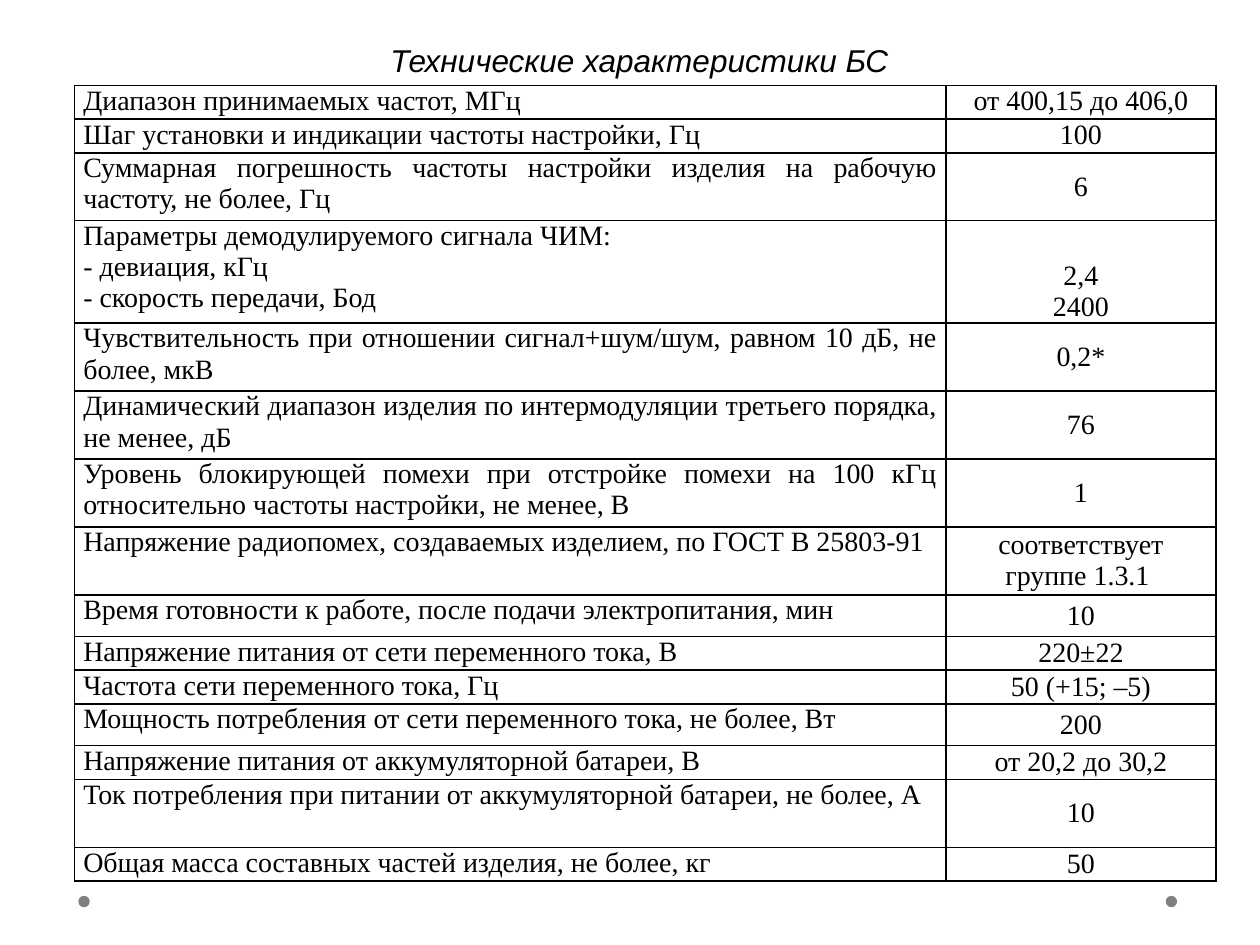
from lxml.etree import SubElement
from pptx import Presentation
from pptx.dml.color import RGBColor
from pptx.enum.shapes import MSO_SHAPE
from pptx.enum.text import MSO_ANCHOR, PP_ALIGN
from pptx.oxml.ns import qn
from pptx.util import Cm, Pt

COLORS = {"text": "000000", "border": "000000", "dot": "808080"}
TITLE_FONT = {"name": "Arial", "size": Pt(18), "italic": True}
CELL_FONT = {"name": "Times New Roman", "size": Pt(16)}
CELL_MARGINS = {"margin_left": Cm(0.18), "margin_right": Cm(0.18),
                "margin_top": 0, "margin_bottom": 0}

TOP, MIDDLE, BOTTOM = MSO_ANCHOR.TOP, MSO_ANCHOR.MIDDLE, MSO_ANCHOR.BOTTOM
LINE, TALL_LINE, TWO_LINES, THREE_LINES = 0.68, 0.84, 1.37, 2.06
COLUMN_WIDTHS = (17.57, 5.44)

# Parameter, value, row height in cm, vertical anchor of the value
SPECIFICATIONS = [
    ("Диапазон принимаемых частот, МГц", "от 400,15 до 406,0", LINE, TOP),
    ("Шаг установки и индикации частоты настройки, Гц", "100", LINE, TOP),
    ("Суммарная погрешность частоты настройки изделия на рабочую частоту, "
     "не более, Гц", "6", TWO_LINES, MIDDLE),
    ("Параметры демодулируемого сигнала ЧИМ:\n- девиация, кГц\n"
     "- скорость передачи, Бод", "2,4\n2400", THREE_LINES, BOTTOM),
    ("Чувствительность при отношении сигнал+шум/шум, равном 10 дБ, "
     "не более, мкВ", "0,2*", TWO_LINES, MIDDLE),
    ("Динамический диапазон изделия по интермодуляции третьего порядка, "
     "не менее, дБ", "76", TWO_LINES, MIDDLE),
    ("Уровень блокирующей помехи при отстройке помехи на 100 кГц "
     "относительно частоты настройки, не менее, В", "1", TWO_LINES, MIDDLE),
    ("Напряжение радиопомех, создаваемых изделием, по ГОСТ В 25803-91",
     "соответствует группе 1.3.1 ", TWO_LINES, MIDDLE),
    ("Время готовности к работе, после подачи электропитания, мин", "10",
     TALL_LINE, MIDDLE),
    ("Напряжение питания от сети переменного тока, В", "220±22", LINE, MIDDLE),
    ("Частота сети переменного тока, Гц", "50 (+15; –5)", LINE, MIDDLE),
    ("Мощность потребления от сети переменного тока, не более, Вт", "200",
     TALL_LINE, MIDDLE),
    ("Напряжение питания от аккумуляторной батареи, В", "от 20,2 до 30,2",
     LINE, MIDDLE),
    ("Ток потребления при питании от аккумуляторной батареи, не более, А",
     "10", TWO_LINES, MIDDLE),
    ("Общая масса составных частей изделия, не более, кг", "50", LINE, MIDDLE),
]


def apply_format(target, values):
    for name, value in values.items():
        setattr(target, name, value)


def write_text(frame, text, alignment, font):
    frame.text = text
    for paragraph in frame.paragraphs:
        paragraph.alignment = alignment
        apply_format(paragraph.font, font)
        paragraph.font.color.rgb = RGBColor.from_string(COLORS["text"])


def add_dot(slide, left):
    dot = slide.shapes.add_shape(MSO_SHAPE.OVAL, Cm(left), Cm(18.06), Cm(0.23), Cm(0.23))
    dot.shadow.inherit = False
    dot.fill.solid()
    dot.fill.fore_color.rgb = RGBColor.from_string(COLORS["dot"])
    dot.line.fill.background()


def add_title(slide):
    title = slide.shapes.add_textbox(Cm(1.27), Cm(0.71), Cm(23.24), Cm(1))
    title.text_frame.word_wrap = True
    write_text(title.text_frame, "Технические характеристики БС",
               PP_ALIGN.CENTER, TITLE_FONT)


def add_borders(cell):
    """Draw a 1 pt line on all four sides; call before setting the cell fill."""
    properties = cell._tc.get_or_add_tcPr()
    for side in ("a:lnL", "a:lnR", "a:lnT", "a:lnB"):
        line = SubElement(properties, qn(side), w=str(Pt(1)))
        fill = SubElement(line, qn("a:solidFill"))
        SubElement(fill, qn("a:srgbClr"), val=COLORS["border"])


def fill_cell(cell, text, alignment, anchor):
    apply_format(cell, CELL_MARGINS | {"vertical_anchor": anchor})
    write_text(cell.text_frame, text, alignment, CELL_FONT)
    add_borders(cell)
    cell.fill.background()


def add_specifications(slide):
    heights = [height for _, _, height, _ in SPECIFICATIONS]
    table = slide.shapes.add_table(
        len(SPECIFICATIONS), len(COLUMN_WIDTHS), Cm(1.5), Cm(1.72),
        Cm(sum(COLUMN_WIDTHS)), Cm(sum(heights))).table
    apply_format(table, {"first_row": False, "horz_banding": False})
    for column, width in zip(table.columns, COLUMN_WIDTHS):
        column.width = Cm(width)
    for row, (parameter, value, height, anchor) in zip(table.rows, SPECIFICATIONS):
        row.height = Cm(height)
        parameter_cell, value_cell = row.cells
        fill_cell(parameter_cell, parameter, PP_ALIGN.JUSTIFY, TOP)
        fill_cell(value_cell, value, PP_ALIGN.CENTER, anchor)


def main():
    presentation = Presentation()
    presentation.slide_width = Cm(25.4)
    presentation.slide_height = Cm(19.05)
    slide = presentation.slides.add_slide(presentation.slide_layouts[6])
    for left in (23.5, 1.58):
        add_dot(slide, left)
    add_title(slide)
    add_specifications(slide)
    presentation.save("out.pptx")


if __name__ == "__main__":
    main()
